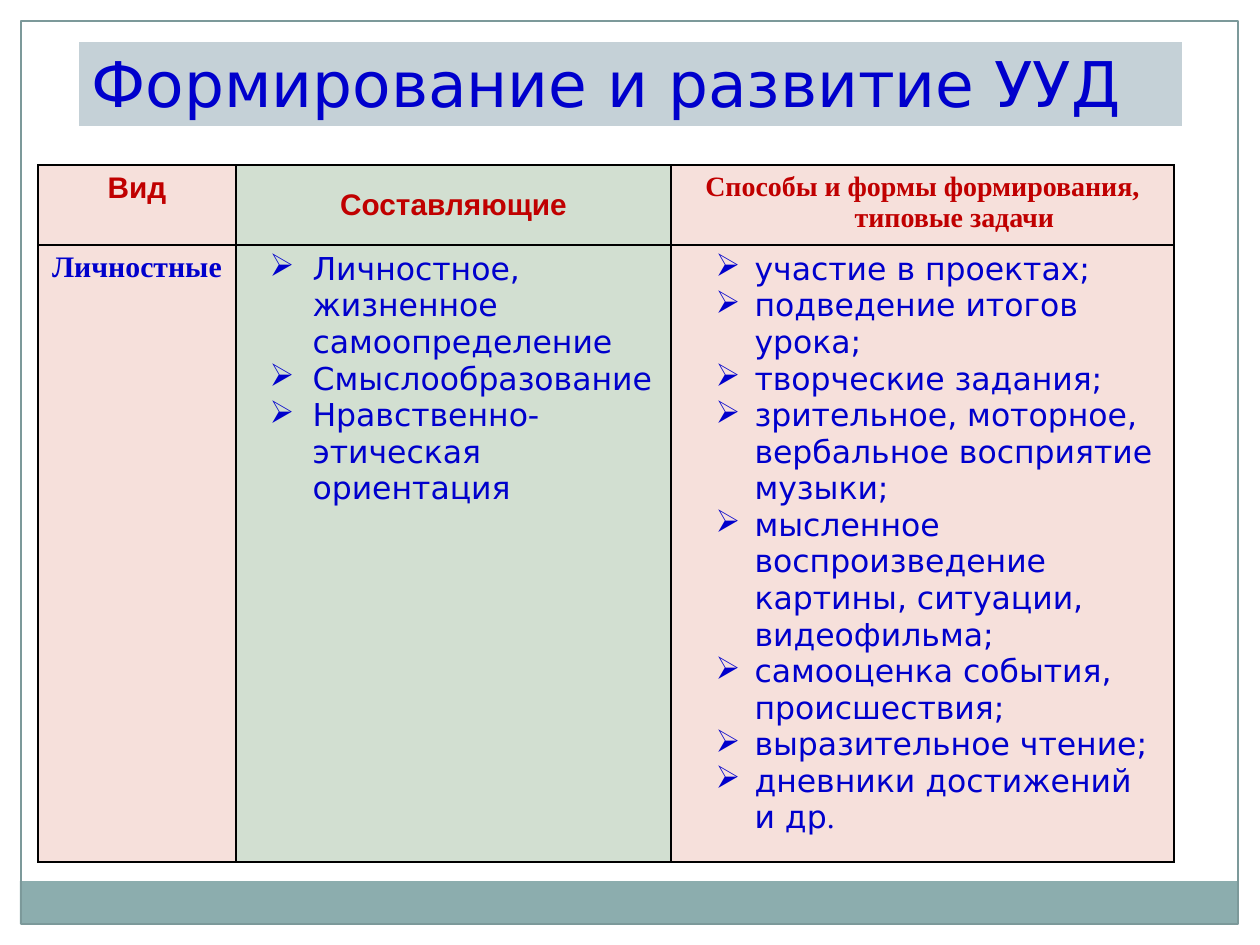
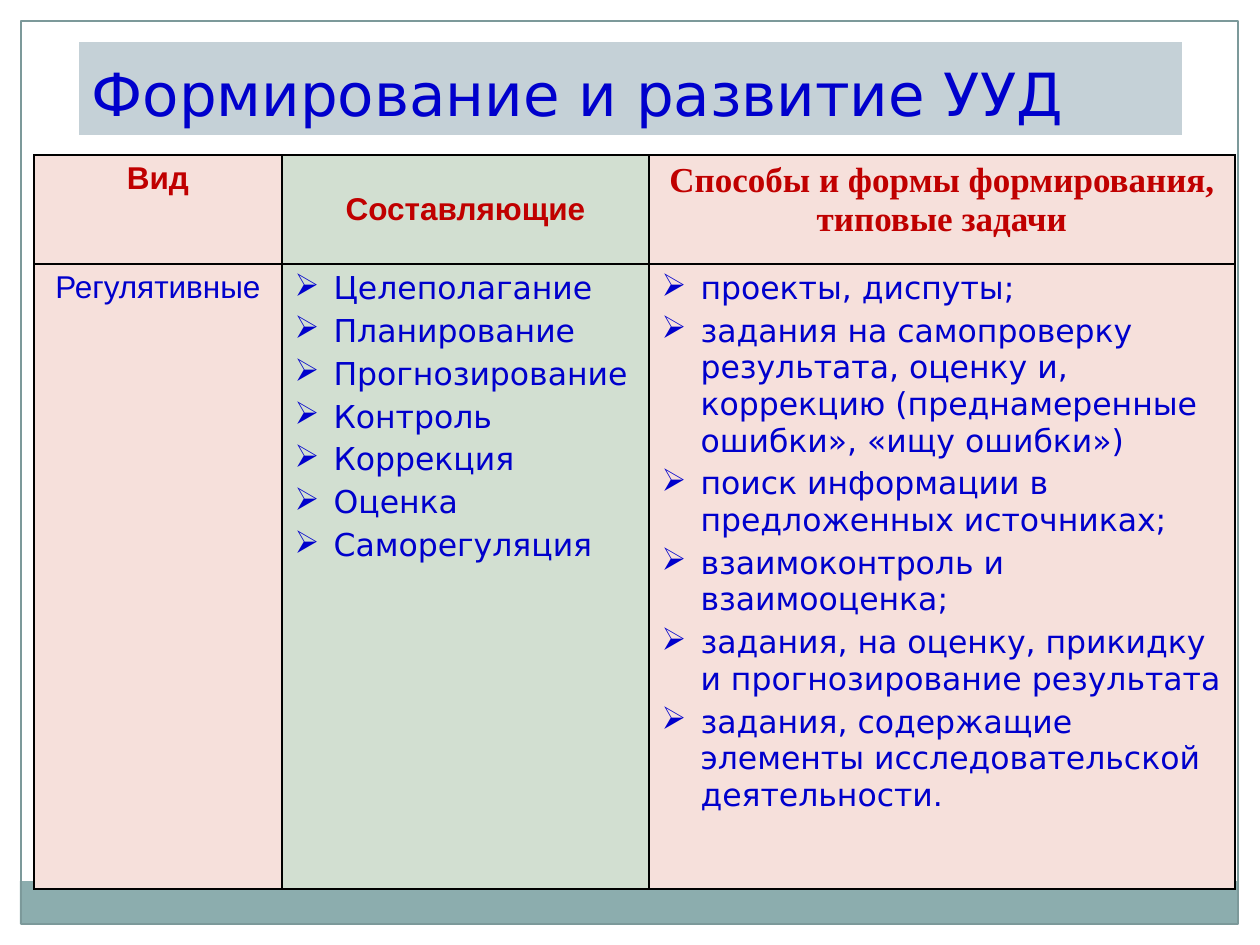
from dataclasses import dataclass
from typing import NamedTuple

from lxml.etree import SubElement
from pptx import Presentation
from pptx.dml.color import RGBColor
from pptx.enum.shapes import MSO_SHAPE as Shape
from pptx.enum.text import MSO_ANCHOR as Anchor, MSO_AUTO_SIZE as AutoSize, PP_ALIGN as Align
from pptx.oxml.ns import qn
from pptx.util import Emu, Pt

EMU_PER_PX = 914400 / 126

BLUE = RGBColor(0x00, 0x00, 0xCC)
RED = RGBColor(0xC0, 0x00, 0x00)
BLACK = RGBColor(0x00, 0x00, 0x00)
PINK = RGBColor(0xF6, 0xE0, 0xDB)
GREEN = RGBColor(0xD2, 0xDF, 0xD1)
TITLE_FILL = RGBColor(0xC5, 0xD1, 0xD7)
BAND_FILL = RGBColor(0x8C, 0xAD, 0xAE)
FRAME_LINE = RGBColor(0x7C, 0x99, 0x9A)

ARIAL, DEJAVU, TIMES = "Arial", "DejaVu Sans", "Times New Roman"
COLUMN_FILLS = (PINK, GREEN, PINK)
TITLE = "Формирование и развитие УУД"
KIND, COMPONENTS = "Вид", "Составляющие"
METHODS = "Способы и формы формирования, типовые задачи"
TITLE_ONLY_LAYOUT = 5


class Box(NamedTuple):
    left: int
    top: int
    width: int
    height: int


BAND = Box(20, 881, 1218, 43)
FRAME = Box(21, 21, 1217, 903)


class TextRun(NamedTuple):
    text: str
    font: str
    size: int
    color: RGBColor = BLUE
    bold: bool = False


@dataclass(frozen=True)
class CellText:
    paragraphs: list[list[TextRun]]
    align: Align = Align.CENTER
    anchor: Anchor = Anchor.TOP
    margin: int = 0
    indent: int = 0
    bullet: str = ""
    space_before: float = 0


@dataclass(frozen=True)
class TableSlide:
    title_size: int
    title_height: int
    left: int
    top: int
    columns: list[int]
    rows: list[int]
    cells: list[list[CellText]]


def label(text: str, font: str, size: int, color: RGBColor = RED, bold: bool = True,
          anchor: Anchor = Anchor.TOP, hanging: int = 0) -> CellText:
    run = TextRun(text, font, size, color, bold)
    return CellText([[run]], anchor=anchor, margin=hanging, indent=-hanging)


def header(label_size: int, methods_size: int, hanging: int = 0) -> list[CellText]:
    return [
        label(KIND, ARIAL, label_size, hanging=hanging),
        label(COMPONENTS, ARIAL, label_size, anchor=Anchor.MIDDLE, hanging=hanging),
        label(METHODS, TIMES, methods_size, hanging=hanging),
    ]


def bullets(items: list[str], margin: int, indent: int, align: Align = Align.LEFT,
            space_before: float = 0, ending: str = "") -> CellText:
    """List of items; the ending is set in Times after the last of them."""
    paragraphs = [[TextRun(item, DEJAVU, 18)] for item in items]
    if ending:
        paragraphs[-1].append(TextRun(ending, TIMES, 18))
    return CellText(paragraphs, align, margin=margin, indent=indent,
                    bullet="➢", space_before=space_before)


PERSONAL = TableSlide(
    title_size=36, title_height=84, left=38, top=165,
    columns=[198, 435, 503], rows=[80, 617],
    cells=[
        header(17, 16, hanging=64),
        [
            label("Личностные", TIMES, 17, BLUE, hanging=64),
            bullets([
                "Личностное, жизненное самоопределение",
                "Смыслообразование",
                "Нравственно-этическая ориентация",
            ], 64, -43, Align.JUSTIFY),
            bullets([
                "участие в проектах;",
                "подведение итогов урока;",
                "творческие задания;",
                "зрительное, моторное, вербальное восприятие музыки;",
                "мысленное воспроизведение картины, ситуации, видеофильма;",
                "самооценка события, происшествия;",
                "выразительное чтение;",
                "дневники достижений и др",
            ], 71, -39, ending="."),
        ],
    ],
)

REGULATIVE = TableSlide(
    title_size=34, title_height=93, left=34, top=155,
    columns=[248, 367, 586], rows=[109, 625],
    cells=[
        header(18, 20),
        [
            label("Регулятивные", ARIAL, 18, BLUE, bold=False),
            bullets([
                "Целеполагание",
                "Планирование",
                "Прогнозирование",
                "Контроль",
                "Коррекция",
                "Оценка",
                "Саморегуляция",
            ], 39, -39, space_before=3.6),
            bullets([
                "проекты, диспуты;",
                "задания на самопроверку результата, оценку и, коррекцию "
                "(преднамеренные ошибки», «ищу ошибки»)",
                "поиск информации в предложенных источниках;",
                "взаимоконтроль и взаимооценка;",
                "задания, на оценку, прикидку и прогнозирование результата",
                "задания, содержащие элементы исследовательской деятельности.",
            ], 39, -39, space_before=3.6),
        ],
    ],
)


def px(length: int) -> Emu:
    return Emu(round(length * EMU_PER_PX))


def add_run(paragraph, content: TextRun) -> None:
    run = paragraph.add_run()
    run.text = content.text
    run.font.name = content.font
    run.font.size = Pt(content.size)
    run.font.bold = content.bold
    run.font.color.rgb = content.color


def add_solid_fill(parent, color: RGBColor) -> None:
    fill = SubElement(parent, qn("a:solidFill"))
    SubElement(fill, qn("a:srgbClr"), val=str(color))


def add_rectangle(slide, box: Box):
    shape = slide.shapes.add_shape(Shape.RECTANGLE, *map(px, box))
    shape.shadow.inherit = False
    return shape


def add_frame(slide) -> None:
    band = add_rectangle(slide, BAND)
    band.fill.solid()
    band.fill.fore_color.rgb = BAND_FILL
    band.line.fill.background()
    frame = add_rectangle(slide, FRAME)
    frame.fill.background()
    frame.line.color.rgb = FRAME_LINE
    frame.line.width = Pt(0.75)


def set_title(slide, size: int, height: int) -> None:
    title = slide.shapes.title
    title.left, title.top, title.width, title.height = map(px, Box(79, 42, 1103, height))
    title.fill.solid()
    title.fill.fore_color.rgb = TITLE_FILL
    text_frame = title.text_frame
    text_frame.word_wrap = True
    text_frame.auto_size = AutoSize.NONE
    text_frame.vertical_anchor = Anchor.BOTTOM
    paragraph = text_frame.paragraphs[0]
    paragraph.alignment = Align.LEFT
    add_run(paragraph, TextRun(TITLE, DEJAVU, size))


def set_borders(cell) -> None:
    properties = cell._tc.get_or_add_tcPr()
    for index, side in enumerate(("a:lnL", "a:lnR", "a:lnT", "a:lnB")):
        border = SubElement(properties, qn(side), w=str(Pt(1)))
        add_solid_fill(border, BLACK)
        properties.insert(index, border)


def format_paragraph(paragraph, content: CellText) -> None:
    paragraph.alignment = content.align
    paragraph.space_before = Pt(content.space_before)
    properties = paragraph._p.get_or_add_pPr()
    properties.set("marL", str(px(content.margin)))
    properties.set("indent", str(px(content.indent)))
    if content.bullet:
        add_solid_color = SubElement(properties, qn("a:buClr"))
        SubElement(add_solid_color, qn("a:srgbClr"), val=str(BLUE))
        SubElement(properties, qn("a:buChar"), char=content.bullet)


def fill_cell(cell, content: CellText, color: RGBColor) -> None:
    cell.fill.solid()
    cell.fill.fore_color.rgb = color
    set_borders(cell)
    cell.vertical_anchor = content.anchor
    text_frame = cell.text_frame
    for index, runs in enumerate(content.paragraphs):
        paragraph = text_frame.add_paragraph() if index else text_frame.paragraphs[0]
        format_paragraph(paragraph, content)
        for run in runs:
            add_run(paragraph, run)


def add_table(slide, content: TableSlide) -> None:
    box = Box(content.left, content.top, sum(content.columns), sum(content.rows))
    table = slide.shapes.add_table(
        len(content.rows), len(content.columns), *map(px, box)).table
    table.first_row = table.horz_banding = False
    for column, width in zip(table.columns, content.columns):
        column.width = px(width)
    for row, height, texts in zip(table.rows, content.rows, content.cells):
        row.height = px(height)
        for cell, text, color in zip(row.cells, texts, COLUMN_FILLS):
            fill_cell(cell, text, color)


def main() -> None:
    presentation = Presentation()
    presentation.slide_width, presentation.slide_height = px(1260), px(945)
    for content in (PERSONAL, REGULATIVE):
        slide = presentation.slides.add_slide(presentation.slide_layouts[TITLE_ONLY_LAYOUT])
        add_frame(slide)
        set_title(slide, content.title_size, content.title_height)
        add_table(slide, content)
    presentation.save("out.pptx")


if __name__ == "__main__":
    main()
